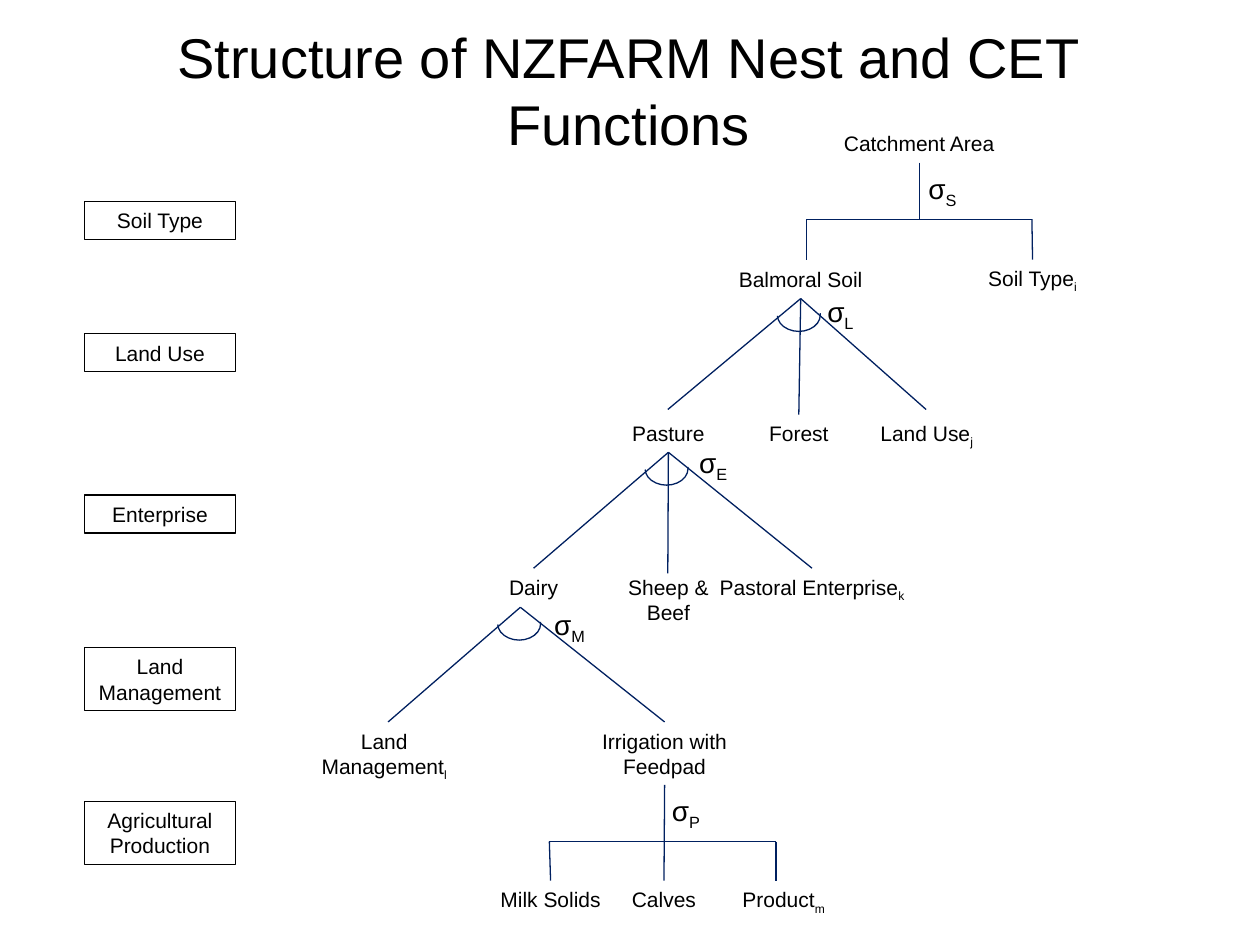
from lxml.etree import SubElement
from pptx import Presentation
from pptx.dml.color import RGBColor
from pptx.enum.shapes import MSO_CONNECTOR, MSO_SHAPE
from pptx.enum.text import MSO_ANCHOR, MSO_AUTO_SIZE, PP_ALIGN
from pptx.oxml.ns import qn
from pptx.util import Inches, Pt

COLORS = {"text": "000000", "frame": "000000", "branch": "002060"}
COLUMNS, ROWS = 100, 75
SLIDE_WIDTH, SLIDE_HEIGHT = Inches(10), Inches(7.5)
JOIN_DISTANCE = 0.25
TOP, BOTTOM = 0, 2

FRAME_FORMAT = {
    "word_wrap": True,
    "auto_size": MSO_AUTO_SIZE.SHAPE_TO_FIT_TEXT,
    "vertical_anchor": MSO_ANCHOR.TOP,
}

LEVELS = [
    (16, 3, "Soil Type"),
    (26.5, 3, "Land Use"),
    (39.3, 3, "Enterprise"),
    (51.4, 5, "Land Management"),
    (63.6, 5, "Agricultural Production"),
]

NODES = [
    ((64, 9.9, 17.9, 3), "Catchment Area", ""),
    ((54.9, 20.7, 17.3, 3), "Balmoral Soil", ""),
    ((73.3, 20.6, 17.3, 3), "Soil Type", "i"),
    ((44.4, 32.9, 17.3, 3), "Pasture", ""),
    ((58.3, 32.9, 10.2, 3), "Forest", ""),
    ((64.9, 32.9, 17.3, 3), "Land Use", "j"),
    ((36.6, 45.1, 11.5, 3), "Dairy", ""),
    ((48.3, 45.1, 9.5, 5), "Sheep & Beef", ""),
    ((55.8, 45.1, 17.3, 3), "Pastoral Enterprise", "k"),
    ((23.2, 57.3, 14.6, 5), "Land Management", "l"),
    ((44.1, 57.3, 17.3, 5), "Irrigation with Feedpad", ""),
    ((36.4, 69.9, 14.6, 3), "Milk Solids", ""),
    ((45.4, 69.9, 14.6, 3), "Calves", ""),
    ((54.9, 69.9, 14.6, 3), "Product", "m"),
]

FANS = [
    ((53, 23.7, 20.5, 8.8), 9.2, "L", (-0.8, -0.8)),
    ((42.5, 35.9, 22, 9.2), 9.6, "E", (-0.4, -1)),
    ((30.8, 48.2, 22, 9.1), None, "M", (-0.1, -0.5)),
]

BRACKETS = [
    ((64, 17.4, 17.9, 3.2), 0, "S"),
    ((43.6, 66.8, 18, 3.1), 3.1, "P"),
]


def across(columns):
    return round(SLIDE_WIDTH * columns / COLUMNS)


def down(rows):
    return round(SLIDE_HEIGHT * rows / ROWS)


def place(box):
    left, top, width, height = box
    return across(left), down(top), across(width), down(height)


def apply_format(target, values):
    for name, value in values.items():
        setattr(target, name, value)


def write(frame, text, subscript="", size=12, **changes):
    apply_format(frame, {**FRAME_FORMAT, **changes})
    para = frame.paragraphs[0]
    para.alignment = PP_ALIGN.CENTER
    for words in filter(None, (text, subscript)):
        span = para.add_run()
        span.text = words
        apply_format(span.font, {"name": "Arial", "size": Pt(size)})
        span.font.color.rgb = RGBColor.from_string(COLORS["text"])
    if subscript:
        span.font._element.set("baseline", "-25000")


def draw_outline(shape, color):
    shape.line.color.rgb = RGBColor.from_string(COLORS[color])
    shape.line.width = Pt(0.75)


def add_label(page, box, text, subscript="", size=12):
    label = page.shapes.add_textbox(*place(box))
    write(label.text_frame, text, subscript, size)
    return label


def add_symbol(page, left, top, subscript):
    add_label(page, (left, top, 8, 3.7), "σ", subscript, 16)


def find_joint(nodes, point):
    for (left, top, width, height), label in nodes:
        for side, edge in ((TOP, top), (BOTTOM, top + height)):
            gaps = (abs(left + width / 2 - point[0]), abs(edge - point[1]))
            if max(gaps) <= JOIN_DISTANCE:
                return label, side
    return None


def add_branch(page, nodes, start, end):
    branch = page.shapes.add_connector(
        MSO_CONNECTOR.STRAIGHT,
        across(start[0]), down(start[1]), across(end[0]), down(end[1]),
    )
    draw_outline(branch, "branch")
    SubElement(branch._element.spPr, qn("a:effectLst"))
    for point, connect in ((start, branch.begin_connect), (end, branch.end_connect)):
        joint = find_joint(nodes, point)
        if joint:
            connect(*joint)


def add_title(page, box):
    title = page.shapes.title
    apply_format(title, dict(zip(("left", "top", "width", "height"), place(box))))
    write(title.text_frame, "Structure of NZFARM Nest and CET Functions", size=32)


def add_levels(page, box):
    left, top, width, _ = box
    for offset, height, text in LEVELS:
        level = page.shapes.add_shape(
            MSO_SHAPE.RECTANGLE, *place((left, top + offset, width, height))
        )
        level.shadow.inherit = False
        level.fill.background()
        draw_outline(level, "frame")
        write(level.text_frame, text, vertical_anchor=MSO_ANCHOR.MIDDLE)


def add_fan(page, nodes, box, middle_drop, subscript, symbol_offset):
    left, top, width, height = box
    apex = (left + 10.5, top)
    for end in (left, left + width):
        add_branch(page, nodes, apex, (end, top + height))
    if middle_drop:
        add_branch(page, nodes, apex, (apex[0], top + middle_drop))
    arc = page.shapes.add_shape(MSO_SHAPE.ARC, *place((apex[0] - 1.8, top, 3.4, 2.6)))
    arc.rotation = 180
    arc.adjustments[0], arc.adjustments[1] = 105.16, 214.67
    arc.shadow.inherit = False
    arc.fill.background()
    draw_outline(arc, "branch")
    add_symbol(page, apex[0] + symbol_offset[0], top + symbol_offset[1], subscript)


def add_bracket(page, nodes, box, stem_drop, subscript):
    left, top, width, height = box
    stem = left + width / 2
    add_branch(page, nodes, (left, top), (left + width, top))
    for end in (left, left + width):
        add_branch(page, nodes, (end, top), (end, top + height))
    add_branch(page, nodes, (stem, top - 4.3), (stem, top + stem_drop))
    add_symbol(page, left + 0.38 * width, top - 4.3, subscript)


def add_tree(page):
    nodes = [(box, add_label(page, box, text, mark)) for box, text, mark in NODES]
    for fan in FANS:
        add_fan(page, nodes, *fan)
    for bracket in BRACKETS:
        add_bracket(page, nodes, *bracket)


def main():
    deck = Presentation()
    deck.slide_width, deck.slide_height = SLIDE_WIDTH, SLIDE_HEIGHT
    page = deck.slides.add_slide(deck.slide_layouts[5])
    add_title(page, (3.3, 1.3, 93.2, 6.4))
    add_levels(page, (6.7, 0, 12, ROWS))
    add_tree(page)
    deck.save("out.pptx")


if __name__ == "__main__":
    main()
